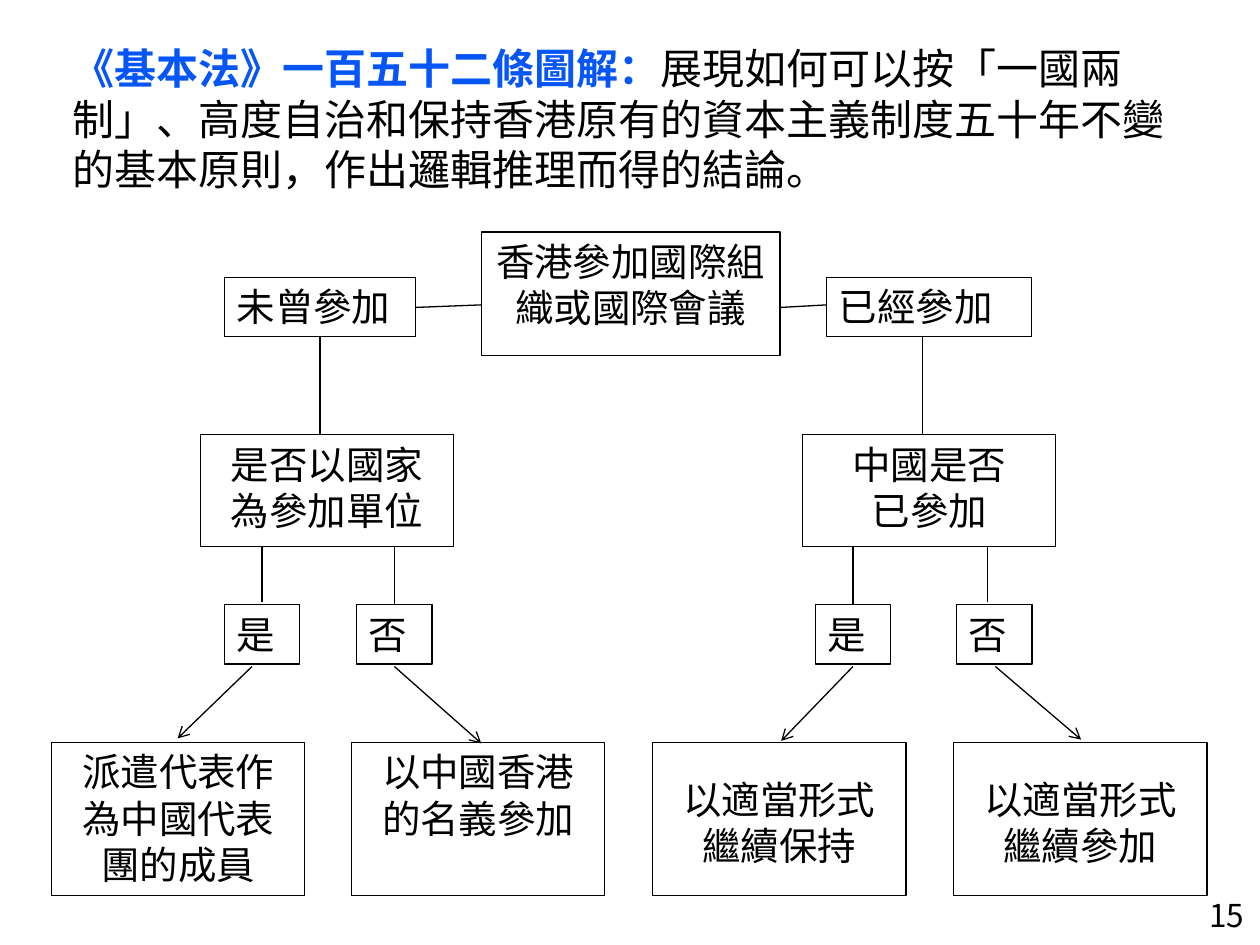
from lxml.etree import SubElement
from pptx import Presentation
from pptx.dml.color import RGBColor
from pptx.enum.shapes import MSO_CONNECTOR, MSO_SHAPE
from pptx.enum.text import MSO_ANCHOR, MSO_AUTO_SIZE, PP_ALIGN
from pptx.oxml.ns import qn
from pptx.util import Inches, Pt

THEME = {
    "font": "Noto Sans CJK SC",
    "ink": RGBColor(0, 0, 0),
    "blue": RGBColor(0x05, 0x55, 0xF7),
    "paper": RGBColor(255, 255, 255),
    "title": Pt(24),
    "node": Pt(22),
    "page": Pt(18),
    "line": Pt(0.75),
}
FRAME = {"word_wrap": True, "vertical_anchor": MSO_ANCHOR.TOP}


def write(para, text, size, color=THEME["ink"], bold=False):
    """Add a run, with the font set for Latin and East Asian letters."""
    run = para.add_run()
    run.text = text
    form = {"name": THEME["font"], "size": size, "bold": bold}
    for key, value in form.items():
        setattr(run.font, key, value)
    run.font.color.rgb = color
    SubElement(run._r.get_or_add_rPr(), qn("a:ea"), typeface=THEME["font"])


deck = Presentation()
deck.slide_width, deck.slide_height = Inches(10), Inches(7.5)
slide = deck.slides.add_slide(deck.slide_layouts[6])
shapes = slide.shapes

# Title and page number
labels = [
    ((0.48, 0.29, 9.04, 1.31), [
        ("《基本法》一百五十二條圖解：", THEME["title"], THEME["blue"], True),
        ("展現如何可以按「一國兩制」、高度自治和保持香港原有的資本主義制度"
         "五十年不變的基本原則，作出邏輯推理而得的結論。", THEME["title"]),
    ]),
    ((9.5, 7.06, 0.5, 0.4), [("15", THEME["page"])]),
]
for place, runs in labels:
    frame = shapes.add_textbox(*map(Inches, place)).text_frame
    for key, value in FRAME.items():
        setattr(frame, key, value)
    for run in runs:
        write(frame.paragraphs[0], *run)

# Boxes: left, lines of text, line spacing of the first line
ROWS = [
    # top, width, height, alignment, boxes
    (1.84, 2.37, 0.98, PP_ALIGN.CENTER, [(3.82, ["香港參加國際組織或國際會議"], None)]),
    (2.2, 1.52, 0.47, PP_ALIGN.LEFT, [(1.78, ["未曾參加"], None)]),
    (2.2, 1.63, 0.47, PP_ALIGN.LEFT, [(6.56, ["已經參加"], None)]),
    (3.45, 2.01, 0.89, PP_ALIGN.CENTER, [
        (1.59, ["是否以國家為參加單位"], None),
        (6.37, ["中國是否", "已參加"], None),
    ]),
    (4.8, 0.6, 0.47, PP_ALIGN.LEFT, [
        (1.78, ["是"], None), (2.83, ["否"], None),
        (6.47, ["是"], None), (7.59, ["否"], None),
    ]),
    (5.89, 2.01, 1.22, PP_ALIGN.CENTER, [
        (0.41, ["派遣代表作為中國代表團的成員"], None),
        (2.79, ["以中國香港的名義參加"], None),
        (5.18, ["以適當形式", "繼續保持"], 1.6),
        (7.57, ["以適當形式", "繼續參加"], 1.6),
    ]),
]
for top, width, height, align, boxes in ROWS:
    for left, lines, space in boxes:
        place = map(Inches, (left, top, width, height))
        box = shapes.add_shape(MSO_SHAPE.RECTANGLE, *place)
        box.shadow.inherit = False
        box.fill.solid()
        box.fill.fore_color.rgb = THEME["paper"]
        box.line.color.rgb = THEME["ink"]
        box.line.width = THEME["line"]
        frame = box.text_frame
        for key, value in FRAME.items():
            setattr(frame, key, value)
        if align == PP_ALIGN.LEFT:
            frame.auto_size = MSO_AUTO_SIZE.SHAPE_TO_FIT_TEXT
        for i, line in enumerate(lines):
            para = frame.paragraphs[0] if i == 0 else frame.add_paragraph()
            para.alignment = align
            if i == 0 and space:
                para.line_spacing = space
            write(para, line, THEME["node"])

# Links: from x, y to x, y
plain = [(3.3, 2.44, 3.82, 2.42), (6.2, 2.44, 6.56, 2.42)]
plain += [(x, 2.67, x, 3.45) for x in (2.54, 7.32)]
plain += [(x, 4.34, x, end) for x, end in
          ((2.08, 4.78), (3.13, 4.8), (6.77, 4.8), (7.84, 4.78))]
arrows = [(2, 5.29, 1.41, 5.86), (3.13, 5.29, 3.82, 5.9),
          (6.77, 5.29, 6.2, 5.88), (7.9, 5.29, 8.58, 5.87)]
for ends in plain + arrows:
    link = shapes.add_connector(MSO_CONNECTOR.STRAIGHT, *map(Inches, ends))
    link.line.color.rgb = THEME["ink"]
    link.line.width = THEME["line"]
    if ends in arrows:
        SubElement(link.line._get_or_add_ln(), qn("a:tailEnd"), type="arrow")
    SubElement(link._element.spPr, qn("a:effectLst"))

deck.save("out.pptx")
